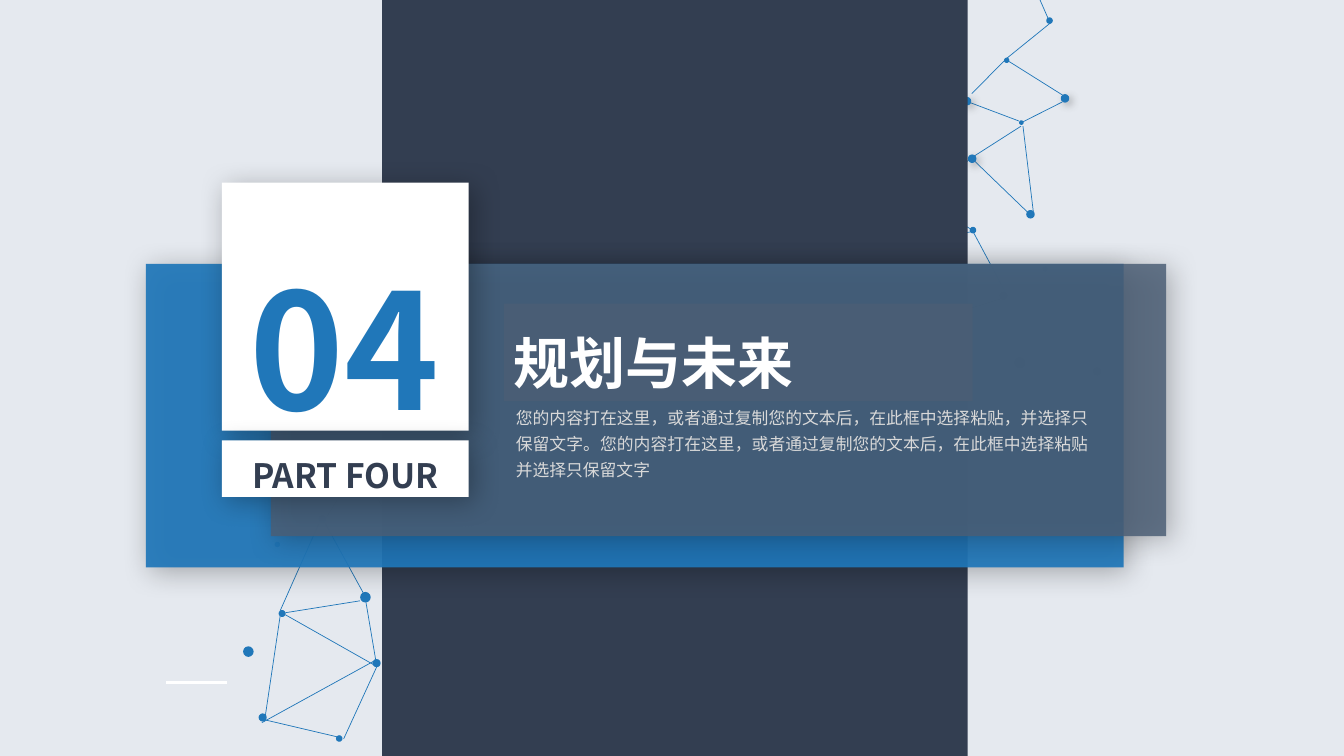
from dataclasses import dataclass

from lxml import etree
from pptx import Presentation
from pptx import util as u
from pptx.dml.color import RGBColor
from pptx.enum import shapes, text
from pptx.oxml.ns import qn


@dataclass(frozen=True)
class Theme:
    background: str = "E5E9EF"
    blue: str = "2077B9"
    navy: str = "333E51"
    slate: str = "4B5E75"
    white: str = "FFFFFF"
    body_grey: str = "D9D9D9"
    heading_font: str = "Noto Sans CJK SC"
    body_font: str = "Arial Narrow"
    number_size: int = 115
    title_size: int = 40
    part_size: int = 24
    body_size: int = 12
    line_spacing: float = 1.3
    # colour, opacity %, blur pt, distance pt
    card_shadow: tuple = ("000000", 30, 20, 5)
    dot_shadow: tuple = ("404040", 40, 6, 3)


THEME = Theme()
RECTANGLE = shapes.MSO_SHAPE.RECTANGLE
OVAL = shapes.MSO_SHAPE.OVAL

# Networks, in cm from the corner of their box.
# Links: x1, y1, x2, y2. Dots: centre x, centre y, diameter, shadow.
UPPER_LINKS = [
    (3.93, 1.55, 5.30, 2.41), (4.71, 0, 4.92, 0.48), (4.97, 0.58, 3.87, 1.47),
    (3.82, 1.52, 2.99, 2.36), (2.96, 2.59, 4.18, 3.05), (3.04, 3.94, 4.23, 3.18),
    (2.91, 4.04, 1.84, 4.72), (4.54, 5.33, 4.28, 3.18), (3.06, 4.06, 4.41, 5.36),
    (4.28, 3.07, 5.27, 2.57), (1.56, 4.95, 2.96, 5.77), (3.04, 5.87, 3.85, 7.39),
    (2.99, 5.84, 0.27, 6.25), (3.75, 7.52, 1.82, 8.13),
]
UPPER_DOTS = [
    (4.95, 0.52, 0.13, False), (2.87, 2.55, 0.18, True), (3.00, 4.00, 0.18, True),
    (4.47, 5.40, 0.18, False), (5.34, 2.48, 0.18, True), (3.87, 1.52, 0.10, False),
    (4.24, 3.09, 0.08, False), (3.02, 5.80, 0.13, False), (3.79, 7.45, 0.18, False),
    (4.20, 9.14, 0.25, False), (6.15, 9.36, 0.18, False), (4.84, 6.78, 0.10, False),
]
LOWER_LINKS = [
    (3.22, 3.36, 3.47, 4.84), (2.66, 6.82, 3.50, 4.99), (0.68, 6.28, 1.06, 3.72),
    (0.60, 6.41, 3.42, 4.86), (3.40, 4.94, 1.19, 3.69), (2.51, 6.77, 0.68, 6.34),
    (1.19, 3.64, 3.07, 3.34), (2.18, 1.36, 3.22, 3.26), (2.05, 1.36, 1.06, 3.59),
    (2.97, 0.04, 2.20, 1.28), (3.09, 0.06, 3.93, 1.46),
]
LOWER_DOTS = [
    (3.49, 4.91, 0.17, False), (2.55, 6.81, 0.13, False), (1.11, 3.66, 0.14, False),
    (2.12, 1.28, 0.17, False), (0.62, 6.28, 0.17, False), (3.21, 3.25, 0.23, False),
    (0.26, 4.62, 0.23, False), (0.99, 1.92, 0.10, False),
]


def rgb(colour):
    return RGBColor.from_string(colour)


def add_shadow(shape, shadow):
    colour, opacity, blur, distance = shadow
    effects = shape._element.spPr.find(qn("a:effectLst"))
    outer = etree.SubElement(
        effects, qn("a:outerShdw"), blurRad=str(u.Pt(blur)), dist=str(u.Pt(distance)),
        dir=str(45 * 60000), algn="tl", rotWithShape="0")
    tint = etree.SubElement(outer, qn("a:srgbClr"), val=colour)
    etree.SubElement(tint, qn("a:alpha"), val=str(opacity * 1000))


def add_block(slide, kind, box, colour, opacity=100, shadow=None):
    shape = slide.shapes.add_shape(kind, *map(u.Cm, box))
    shape.shadow.inherit = False
    shape.fill.solid()
    shape.fill.fore_color.rgb = rgb(colour)
    shape.line.fill.background()
    if opacity < 100:
        tint = shape._element.spPr.find(qn("a:solidFill"))[0]
        etree.SubElement(tint, qn("a:alpha"), val=str(opacity * 1000))
    if shadow:
        add_shadow(shape, shadow)
    return shape


def add_line(slide, x1, y1, x2, y2, colour, width):
    line = slide.shapes.add_connector(
        shapes.MSO_CONNECTOR.STRAIGHT, *map(u.Cm, (x1, y1, x2, y2)))
    line.line.color.rgb = rgb(colour)
    line.line.width = u.Pt(width)
    etree.SubElement(line._element.spPr, qn("a:effectLst"))


def write(shape, words, size, colour, font, bold=False,
          align=text.PP_ALIGN.LEFT, anchor=text.MSO_ANCHOR.TOP):
    frame = shape.text_frame
    frame.word_wrap = True
    frame.vertical_anchor = anchor
    paragraph = frame.paragraphs[0]
    paragraph.text = words
    paragraph.alignment = align
    paragraph.line_spacing = THEME.line_spacing
    paragraph.font.size = u.Pt(size)
    paragraph.font.bold = bold
    paragraph.font.color.rgb = rgb(colour)
    paragraph.font.name = font
    # East Asian typeface follows the Latin one
    latin = paragraph._p.pPr.find(qn("a:defRPr")).find(qn("a:latin"))
    east_asian = etree.Element(qn("a:ea"), typeface=THEME.heading_font)
    latin.addnext(east_asian)


def add_network(slide, left, top, links, dots):
    for x1, y1, x2, y2 in links:
        add_line(slide, left + x1, top + y1, left + x2, top + y2, THEME.blue, 0.5)
    for x, y, diameter, shaded in dots:
        box = (left + x - diameter / 2, top + y - diameter / 2, diameter, diameter)
        dot = add_block(slide, OVAL, box, THEME.blue,
                        shadow=THEME.dot_shadow if shaded else None)
        dot.line.color.rgb = rgb(THEME.blue)
        dot.line.width = u.Pt(1)


def add_banner(slide, left, top):
    add_block(slide, RECTANGLE, (left, top, 24.64, 7.65), THEME.blue, 93,
              THEME.card_shadow)
    add_line(slide, left + 0.5, top + 10.54, left + 2.03, top + 10.54, THEME.white, 2.25)
    add_block(slide, RECTANGLE, (left + 3.15, top, 22.56, 6.86), THEME.slate, 84,
              THEME.card_shadow)


def add_number_card(slide, left, top, number):
    add_block(slide, RECTANGLE, (left, top, 6.22, 6.25), THEME.white,
              shadow=THEME.card_shadow)
    label = slide.shapes.add_textbox(*map(u.Cm, (left - 0.64, top + 0.1, 7.47, 6.58)))
    write(label, number, THEME.number_size, THEME.blue, THEME.heading_font, True,
          text.PP_ALIGN.CENTER)


def add_part_card(slide, left, top, words):
    card = add_block(slide, RECTANGLE, (left, top, 6.22, 1.42), THEME.white,
                     shadow=THEME.card_shadow)
    write(card, words, THEME.part_size, THEME.navy, THEME.heading_font, True,
          text.PP_ALIGN.CENTER, text.MSO_ANCHOR.MIDDLE)


def add_heading(slide, left, top, title, body):
    panel = add_block(slide, RECTANGLE, (left, top, 11.81, 2.46), THEME.slate, 84)
    write(panel, title, THEME.title_size, THEME.white, THEME.heading_font, True)
    summary = slide.shapes.add_textbox(*map(u.Cm, (left + 0.05, top + 2.34, 14.94, 2.24)))
    write(summary, body, THEME.body_size, THEME.body_grey, THEME.body_font,
          align=text.PP_ALIGN.JUSTIFY)


def build_section_slide(presentation):
    slide = presentation.slides.add_slide(presentation.slide_layouts[6])
    slide.background.fill.solid()
    slide.background.fill.fore_color.rgb = rgb(THEME.background)

    # Backdrop
    add_network(slide, 21.5, 0, UPPER_LINKS, UPPER_DOTS)
    add_network(slide, 6, 11.8, LOWER_LINKS, LOWER_DOTS)
    add_block(slide, RECTANGLE, (9.63, 0, 14.76, 19.05), THEME.navy)

    # Section title
    add_banner(slide, 3.68, 6.65)
    add_number_card(slide, 5.59, 4.6, "04")
    add_heading(
        slide, 12.7, 7.65, "规划与未来",
        "您的内容打在这里，或者通过复制您的文本后，在此框中选择粘贴，并选择只保留文字。"
        "您的内容打在这里，或者通过复制您的文本后，在此框中选择粘贴并选择只保留文字")
    add_part_card(slide, 5.59, 11.1, "PART FOUR")


def main():
    presentation = Presentation()
    presentation.slide_width = u.Cm(33.87)
    presentation.slide_height = u.Cm(19.05)
    build_section_slide(presentation)
    presentation.save("out.pptx")


if __name__ == "__main__":
    main()
